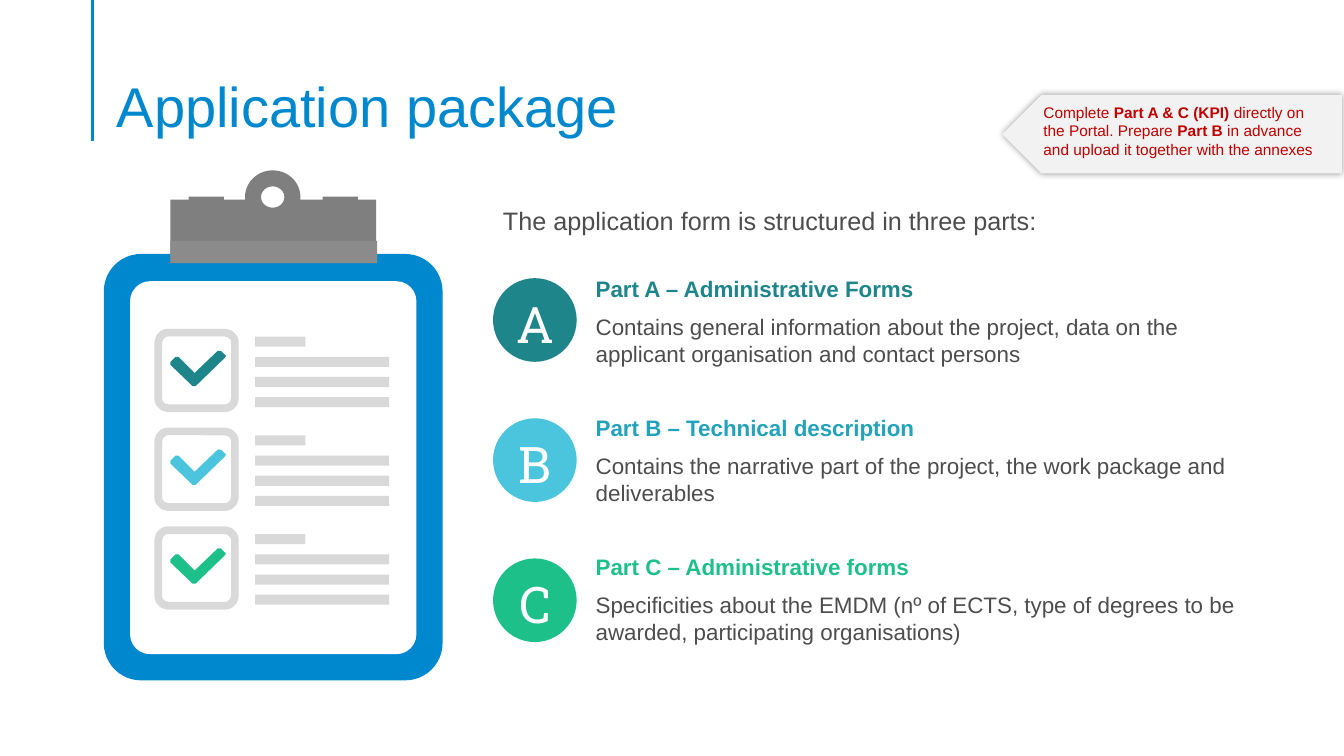
from dataclasses import dataclass

from lxml import etree
from pptx import Presentation
from pptx.dml.color import RGBColor
from pptx.enum.shapes import MSO_CONNECTOR, MSO_SHAPE
from pptx.enum.text import MSO_ANCHOR, PP_ALIGN
from pptx.oxml.ns import qn
from pptx.util import Inches, Pt

STRAIGHT = MSO_CONNECTOR.STRAIGHT
RECT, ROUNDED = MSO_SHAPE.RECTANGLE, MSO_SHAPE.ROUNDED_RECTANGLE
OVAL, DONUT, PENTAGON = MSO_SHAPE.OVAL, MSO_SHAPE.DONUT, MSO_SHAPE.PENTAGON
TOP, MIDDLE, BOTTOM = MSO_ANCHOR.TOP, MSO_ANCHOR.MIDDLE, MSO_ANCHOR.BOTTOM
LEFT, CENTER, JUSTIFY = PP_ALIGN.LEFT, PP_ALIGN.CENTER, PP_ALIGN.JUSTIFY


@dataclass(frozen=True)
class Theme:
    """Colours, fonts and type sizes of the slide."""
    blue: str = "0088CE"
    teal: str = "1E858B"
    cyan: str = "4BC5DE"
    deep_cyan: str = "23A2BC"
    green: str = "1EC08A"
    white: str = "FFFFFF"
    text: str = "4D4D4D"
    red: str = "C00000"
    callout: str = "F2F2F2"
    clip: str = "7F7F7F"
    clip_edge: str = "8B8B8B"
    light: str = "D9D9D9"
    font: str = "Arial"
    letter_font: str = "Roboto Slab"
    title_size: int = 40
    letter_size: int = 36
    intro_size: int = 18
    body_size: int = 16
    note_size: int = 11


THEME = Theme()
PARTS = (
    ("A", "Part A – Administrative Forms",
     "Contains general information about the project, data on the applicant "
     "organisation and contact persons", THEME.teal, THEME.teal),
    ("B", "Part B – Technical description",
     "Contains the narrative part of the project, the work package and "
     "deliverables", THEME.cyan, THEME.deep_cyan),
    ("C", "Part C – Administrative forms",
     "Specificities about the EMDM (nº of ECTS, type of degrees to be "
     "awarded, participating organisations)", THEME.green, THEME.green),
)
NOTE = (
    ("Complete ", False), ("Part A & C (KPI) ", True),
    ("directly on the Portal. Prepare ", False), ("Part B", True),
    (" in advance and upload it together with the annexes", False),
)
CLIP_OUTLINE = (
    (1.69, 1.98), (2.56, 1.98), (2.6, 2.09), (2.71, 2.15), (2.82, 2.09),
    (2.86, 1.98), (3.73, 1.98), (3.73, 2.61), (1.69, 2.61),
)
TICK_OUTLINE = (
    (0.55, 0.06), (0.5, 0.01), (0.47, 0.01), (0.24, 0.23), (0.08, 0.07),
    (0.05, 0.07), (0, 0.12), (0, 0.15), (0.22, 0.36), (0.25, 0.36), (0.54, 0.08),
)


def rgb(color):
    """Turn a hex string into a colour."""
    return RGBColor.from_string(color)


def paint(shape, color):
    """Give a shape a flat fill without line or shadow."""
    shape.shadow.inherit = False
    shape.fill.solid()
    shape.fill.fore_color.rgb = rgb(color)
    shape.line.fill.background()
    return shape


def add_block(page, kind, place, color, corner=None):
    """Add a plain preset shape, with an optional first adjustment."""
    shape = page.shapes.add_shape(kind, *map(Inches, place))
    if corner is not None:
        shape.adjustments[0] = corner
    return paint(shape, color)


def add_polygon(page, points, color):
    """Add a filled polygon through points given in inches."""
    corners = [(Inches(x), Inches(y)) for x, y in points]
    builder = page.shapes.build_freeform(*corners[0])
    builder.add_line_segments(corners[1:], close=True)
    return paint(builder.convert_to_shape(), color)


def add_text(page, place, spans, size, color, font=THEME.font, anchor=TOP,
             align=LEFT, spacing=None, margins=(0.1, 0.05, 0.1, 0.05), wrap=True):
    """Add a one-paragraph text box from (wording, bold) spans."""
    box = page.shapes.add_textbox(*map(Inches, place))
    frame = box.text_frame
    frame.word_wrap = wrap
    frame.vertical_anchor = anchor
    (frame.margin_left, frame.margin_top,
     frame.margin_right, frame.margin_bottom) = map(Inches, margins)
    para = frame.paragraphs[0]
    para.alignment = align
    para.line_spacing = spacing
    para.font.name = font
    para.font.size = Pt(size)
    para.font.color.rgb = rgb(color)
    for wording, bold in spans:
        span = para.add_run()
        span.text = wording
        span.font.bold = bold


def add_title(page):
    """Add the title and the rule beside it."""
    rule = page.shapes.add_connector(
        STRAIGHT, Inches(0.92), Inches(0), Inches(0.92), Inches(1.4))
    rule.line.color.rgb = rgb(THEME.blue)
    rule.line.width = Pt(2.25)
    etree.SubElement(rule.element.spPr, qn("a:effectLst"))
    add_text(page, (1.06, 0.53, 11.5, 0.86), [("Application package", False)],
             THEME.title_size, THEME.blue, anchor=BOTTOM, spacing=0.9,
             margins=(0.1, 0.05, 0.1, 0))


def add_clipboard(page):
    """Draw the board, its paper and the clip."""
    add_block(page, ROUNDED, (1.03, 2.52, 3.36, 4.23), THEME.blue, 0.11)
    add_block(page, ROUNDED, (1.29, 2.79, 2.84, 3.7), THEME.white, 0.07)
    add_polygon(page, CLIP_OUTLINE, THEME.clip)
    add_block(page, RECT, (1.69, 2.39, 2.05, 0.22), THEME.clip_edge)
    add_block(page, DONUT, (2.43, 1.69, 0.55, 0.53), THEME.clip, 0.3)
    for left in (1.87, 3.2):
        add_block(page, RECT, (left, 1.95, 0.35, 0.09), THEME.clip)


def add_check_row(page, top, color):
    """Draw one ticked box with its four lines of writing."""
    frame = add_block(page, ROUNDED, (1.57, top + 0.04, 0.76, 0.75),
                      THEME.white, 0.13)
    frame.line.color.rgb = rgb(THEME.light)
    frame.line.width = Pt(5.5)
    for index, width in enumerate((0.5, 1.33, 1.33, 1.33)):
        add_block(page, RECT, (2.53, top + 0.08 + 0.2 * index, width, 0.1),
                  THEME.light)
    add_polygon(page, [(1.69 + x, top + 0.21 + y) for x, y in TICK_OUTLINE], color)


def add_part(page, index, letter, heading, body, color, heading_color):
    """Add one lettered part with heading and description."""
    circle_top = 2.76 + 1.39 * index
    text_top = 2.68 + 1.38 * index
    add_block(page, OVAL, (4.89, circle_top, 0.83, 0.83), color)
    add_text(page, (5.03, circle_top + 0.13, 0.56, 0.57), [(letter, False)],
             THEME.letter_size, THEME.white, THEME.letter_font, MIDDLE, CENTER,
             spacing=1.1, margins=(0, 0, 0, 0), wrap=False)
    add_text(page, (5.81, text_top, 6.56, 0.37), [(heading, True)],
             THEME.body_size, heading_color, anchor=MIDDLE)
    add_text(page, (5.81, text_top + 0.37, 6.56, 0.64), [(body, False)],
             THEME.body_size, THEME.text, anchor=MIDDLE)


def add_callout(page):
    """Add the left-pointing note with its soft shadow."""
    arrow = add_block(page, PENTAGON, (9.94, 0.94, 3.37, 0.78), THEME.callout)
    arrow.rotation = 180
    effects = arrow.element.spPr.find(qn("a:effectLst"))
    shadow = etree.SubElement(effects, qn("a:outerShdw"), blurRad=str(Pt(5)),
                              dist="0", dir="0", rotWithShape="0")
    black = etree.SubElement(shadow, qn("a:srgbClr"), val="000000")
    etree.SubElement(black, qn("a:alpha"), val="40000")
    add_text(page, (10.25, 0.97, 2.99, 0.66), NOTE, THEME.note_size, THEME.red)


def main():
    """Build the slide and save it."""
    deck = Presentation()
    deck.slide_width, deck.slide_height = Inches(13.33), Inches(7.5)
    page = deck.slides.add_slide(deck.slide_layouts[6])
    add_title(page)
    add_clipboard(page)
    add_text(page, (4.89, 1.99, 7.47, 0.4),
             [("The application form is structured in three parts:", False)],
             THEME.intro_size, THEME.text, align=JUSTIFY)
    for index, part in enumerate(PARTS):
        add_check_row(page, 3.26 + 0.98 * index, part[3])
        add_part(page, index, *part)
    add_callout(page)
    deck.save("out.pptx")


if __name__ == "__main__":
    main()
